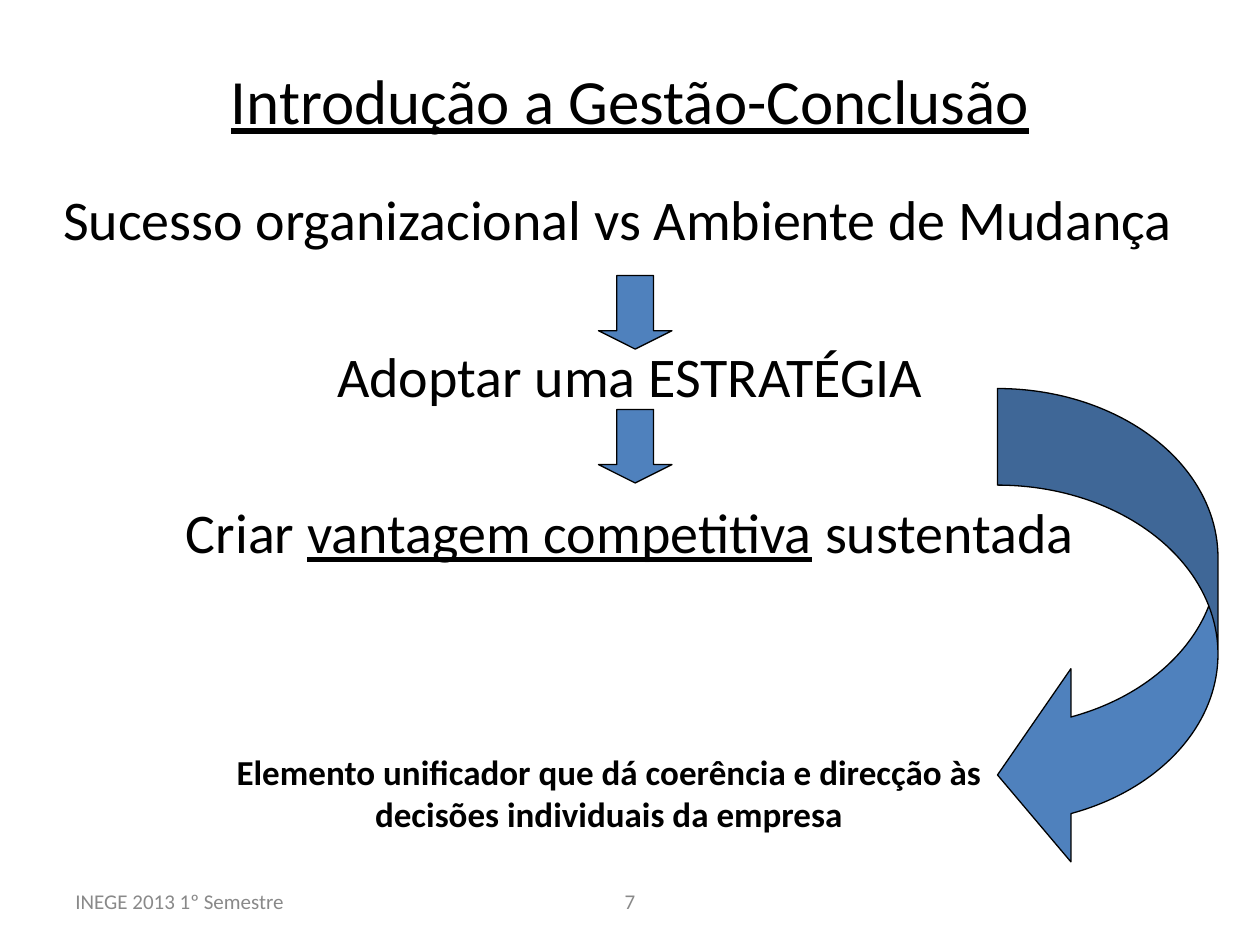
from pptx import Presentation
from pptx.dml.color import RGBColor
from pptx.enum.shapes import MSO_SHAPE
from pptx.enum.text import MSO_ANCHOR, PP_ALIGN
from pptx.util import Pt

COLORS = {"text": "000000", "footer": "898989", "arrow": "4F81BD", "outline": "000000"}
FONT = "Calibri"


def format_runs(paragraph, size, color="text", bold=False, alignment=PP_ALIGN.CENTER):
    paragraph.alignment = alignment
    for run in paragraph.runs:
        run.font.name = FONT
        run.font.size = Pt(size)
        run.font.bold = bold
        run.font.color.rgb = RGBColor.from_string(COLORS[color])


def add_text_box(slide, left, top, width, height, anchor):
    box = slide.shapes.add_textbox(Pt(left), Pt(top), Pt(width), Pt(height))
    box.text_frame.word_wrap = True
    box.text_frame.vertical_anchor = anchor
    return box.text_frame


presentation = Presentation()
presentation.slide_width = Pt(720)
presentation.slide_height = Pt(540)
slide = presentation.slides.add_slide(presentation.slide_layouts[6])

# Footer
footers = [
    ("INEGE 2013 1º Semestre", 36, 168, PP_ALIGN.LEFT),
    ("7", 246, 228, PP_ALIGN.CENTER),
]
for text, left, width, alignment in footers:
    text_frame = add_text_box(slide, left, 500.5, width, 28.75, MSO_ANCHOR.MIDDLE)
    text_frame.text = text
    format_runs(text_frame.paragraphs[0], 12, "footer", alignment=alignment)

# Title
text_frame = add_text_box(slide, 36, 36, 648, 42, MSO_ANCHOR.MIDDLE)
text_frame.text = "Introdução a Gestão-Conclusão"
format_runs(text_frame.paragraphs[0], 36)
text_frame.paragraphs[0].runs[0].font.underline = True

# Body: three steps, the first indented from the left
body = add_text_box(slide, 0, 102, 720, 384, MSO_ANCHOR.TOP)
body.text = "Sucesso organizacional vs Ambiente de Mudança\nAdoptar uma ESTRATÉGIA\nCriar "
success, strategy, advantage = body.paragraphs
underlined_run = advantage.add_run()
underlined_run.text = "vantagem competitiva"
underlined_run.font.underline = True
advantage.add_run().text = " sustentada"

format_runs(success, 32, alignment=PP_ALIGN.LEFT)
success._p.get_or_add_pPr().set("marL", str(Pt(29)))
for paragraph in (strategy, advantage):
    format_runs(paragraph, 32)
    paragraph.space_before = Pt(51)

# Arrows between the steps and down to the closing statement
arrows = [
    (MSO_SHAPE.DOWN_ARROW, 342, 157.5, 42, 42, (0.5, 0.25)),
    (MSO_SHAPE.DOWN_ARROW, 342, 234, 42, 42, (0.5, 0.25)),
    (MSO_SHAPE.CURVED_LEFT_ARROW, 570, 222, 126, 276, (0.438, 0.876, 0.333)),
]
for kind, left, top, width, height, adjustments in arrows:
    arrow = slide.shapes.add_shape(kind, Pt(left), Pt(top), Pt(width), Pt(height))
    for index, value in enumerate(adjustments):
        arrow.adjustments[index] = value
    arrow.shadow.inherit = False
    arrow.fill.solid()
    arrow.fill.fore_color.rgb = RGBColor.from_string(COLORS["arrow"])
    arrow.line.color.rgb = RGBColor.from_string(COLORS["outline"])
    arrow.line.width = Pt(0.75)

# Closing statement
text_frame = add_text_box(slide, 120, 425, 456, 55.5, MSO_ANCHOR.BOTTOM)
text_frame.text = (
    "Elemento unificador que dá coerência e direcção às decisões individuais da empresa"
)
format_runs(text_frame.paragraphs[0], 20, bold=True)

presentation.save("out.pptx")
